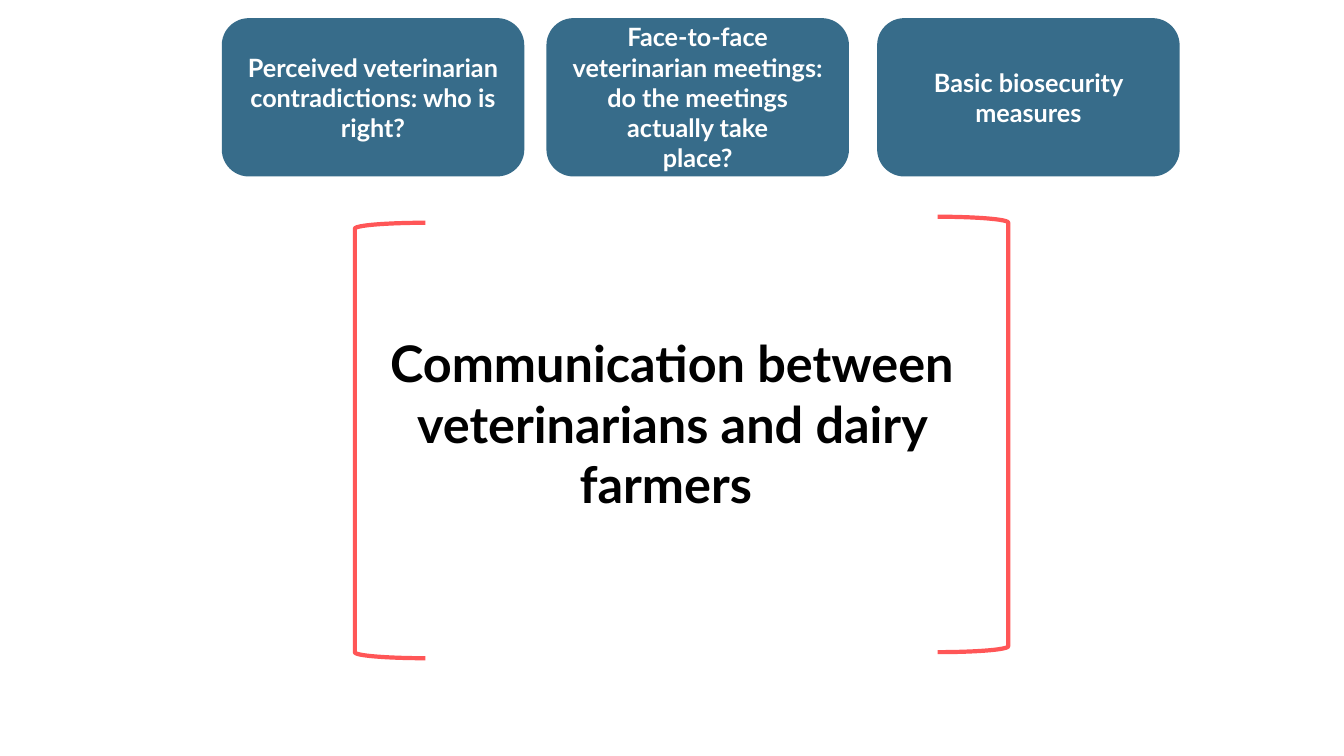
import pptx
import pptx.dml.color
import pptx.enum.shapes
import pptx.enum.text
import pptx.util

Inches = pptx.util.Inches
Pt = pptx.util.Pt
Shape = pptx.enum.shapes.MSO_SHAPE


def color(hex_string):
    return pptx.dml.color.RGBColor.from_string(hex_string)


def write(frame, lines, size, text_color):
    frame.word_wrap = True
    frame.text = "\n".join(lines)
    for para in frame.paragraphs:
        para.alignment = pptx.enum.text.PP_ALIGN.CENTER
        para.font.name = "Lato"
        para.font.size = Pt(size)
        para.font.bold = True
        para.font.color.rgb = color(text_color)


deck = pptx.Presentation()
deck.slide_width = Inches(13.33)
deck.slide_height = Inches(7.5)
page = deck.slides.add_slide(deck.slide_layouts[6])

themes = [
    (2.21, ["Perceived veterinarian contradictions: who is right?"]),
    (5.43, ["Face-to-face veterinarian meetings: do the meetings actually take", "place?"]),
    (8.71, ["Basic biosecurity measures"]),
]
for left, lines in themes:
    box = page.shapes.add_shape(
        Shape.ROUNDED_RECTANGLE, Inches(left), Inches(0.19), Inches(2.98), Inches(1.55))
    box.shadow.inherit = False
    box.fill.solid()
    box.fill.fore_color.rgb = color("376C8A")
    box.line.color.rgb = color("376C8A")
    box.line.width = Pt(1.5)
    box.text_frame.vertical_anchor = pptx.enum.text.MSO_ANCHOR.MIDDLE
    write(box.text_frame, lines, 18, "FFFFFF")

topic = page.shapes.add_textbox(Inches(3.33), Inches(3.25), Inches(6.67), Inches(1.92))
topic.text_frame.auto_size = pptx.enum.text.MSO_AUTO_SIZE.SHAPE_TO_FIT_TEXT
write(topic.text_frame, ["Communication between veterinarians and dairy farmers "], 36, "000000")

brackets = [(Shape.LEFT_BRACKET, 3.52, 2.21), (Shape.RIGHT_BRACKET, 9.3, 2.15)]
for kind, left, top in brackets:
    bracket = page.shapes.add_shape(kind, Inches(left), Inches(top), Inches(0.7), Inches(4.32))
    bracket.shadow.inherit = False
    bracket.fill.background()
    bracket.line.color.rgb = color("FF5657")
    bracket.line.width = Pt(3)

deck.save("out.pptx")
